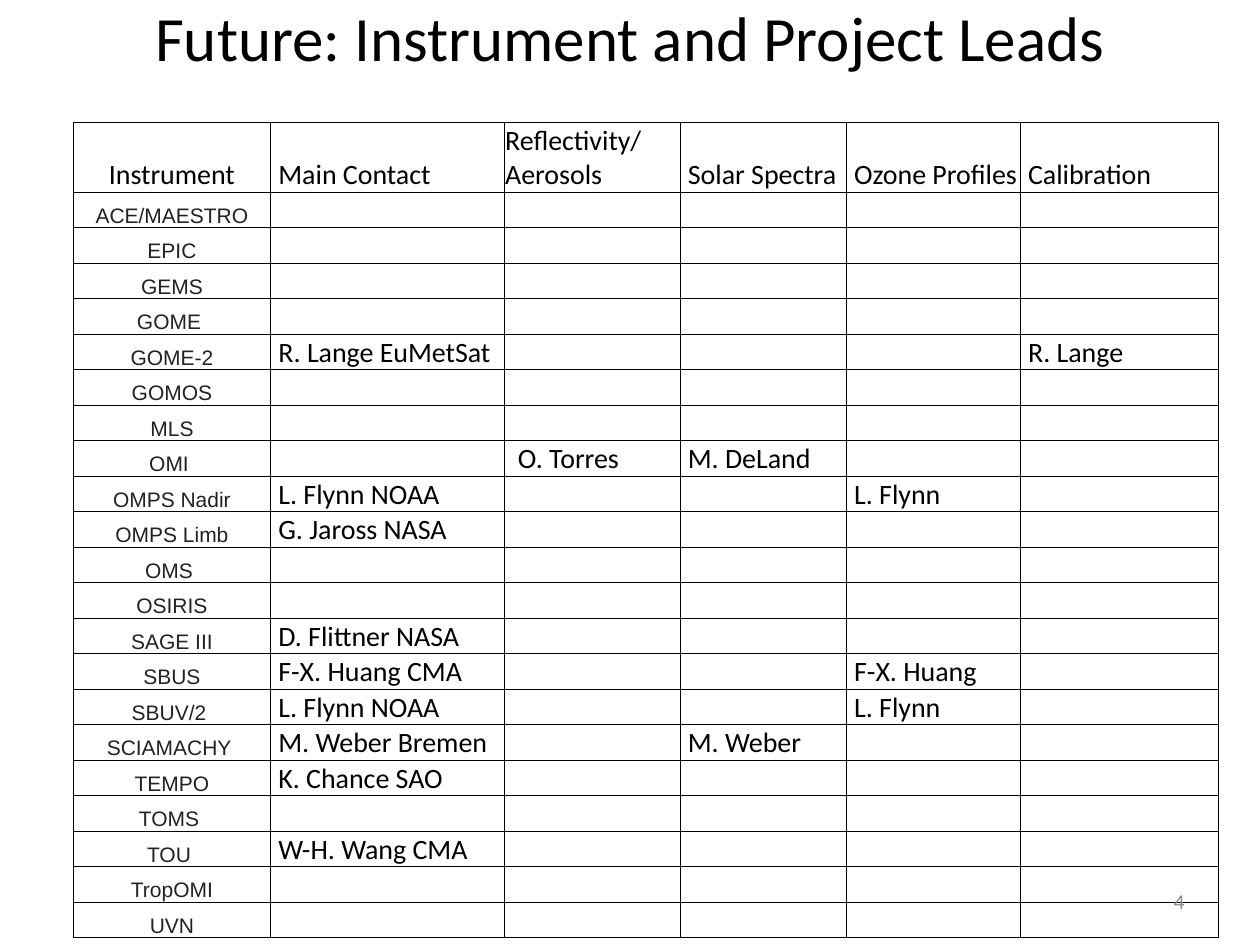
from lxml.etree import SubElement
from pptx import Presentation
from pptx.dml.color import RGBColor
from pptx.enum.text import MSO_ANCHOR as ANCHOR, PP_ALIGN as ALIGN
from pptx.oxml.ns import qn
from pptx.util import Inches, Pt

COLUMNS = ["Instrument", "Main Contact", "Reflectivity/ Aerosols",
           "Solar Spectra", "Ozone Profiles", "Calibration"]
WIDTHS = [1.57, 1.85, 1.4, 1.32, 1.38, 1.57]
INSTRUMENTS = ["ACE/MAESTRO", "EPIC", "GEMS", "GOME ", "GOME-2", "GOMOS", "MLS",
               "OMI ", "OMPS Nadir", "OMPS Limb", "OMS ", "OSIRIS", "SAGE III",
               "SBUS", "SBUV/2 ", "SCIAMACHY ", "TEMPO", "TOMS ", "TOU ",
               "TropOMI", "UVN"]
# Leads by instrument, then by column number
LEADS = {
    "GOME-2": {1: "R. Lange EuMetSat", 5: "R. Lange"},
    "OMI": {2: "O. Torres", 3: "M. DeLand"},
    "OMPS Nadir": {1: "L. Flynn NOAA", 4: "L. Flynn"},
    "OMPS Limb": {1: "G. Jaross NASA"},
    "SAGE III": {1: "D. Flittner NASA"},
    "SBUS": {1: "F-X. Huang CMA", 4: "F-X. Huang"},
    "SBUV/2": {1: "L. Flynn NOAA", 4: "L. Flynn"},
    "SCIAMACHY": {1: "M. Weber Bremen", 3: "M. Weber"},
    "TEMPO": {1: "K. Chance SAO"},
    "TOU": {1: "W-H. Wang CMA"},
}


def write(tf, text, size, color="000000", font="Calibri", align=ALIGN.LEFT):
    p = tf.paragraphs[0]
    p.alignment = align
    if not text:  # an empty cell keeps its text size through the end mark
        SubElement(p._p, qn("a:endParaRPr"), sz=str(size * 100))
        return
    p.text = text
    f = p.runs[0].font
    f.name, f.size = font, Pt(size)
    f.color.rgb = RGBColor.from_string(color)


def set_borders(cell):
    tcPr = cell._tc.get_or_add_tcPr()
    for side in ("lnL", "lnR", "lnT", "lnB"):
        ln = SubElement(tcPr, qn(f"a:{side}"), w=str(Pt(0.5)))
        fill = SubElement(ln, qn("a:solidFill"))
        SubElement(fill, qn("a:srgbClr"), val="000000")


prs = Presentation()
prs.slide_width, prs.slide_height = Inches(10), Inches(7.5)
s = prs.slides.add_slide(prs.slide_layouts[6])

# Table of leads
rows = [COLUMNS]
for name in INSTRUMENTS:
    leads = LEADS.get(name.strip(), {})
    rows.append([name] + [leads.get(c, "") for c in range(1, len(COLUMNS))])

frame = s.shapes.add_table(len(rows), len(COLUMNS), Inches(0.58), Inches(0.97),
                           Inches(9.08), Inches(6.36))
table = frame.table
table.first_row = table.horz_banding = False
for column, width in zip(table.columns, WIDTHS):
    column.width = Inches(width)

for r, values in enumerate(rows):
    table.rows[r].height = Inches(0.26 if r else 0.52)
    for c, value in enumerate(values):
        cell = table.cell(r, c)
        cell.margin_left = cell.margin_right = cell.margin_top = Inches(0.01)
        cell.margin_bottom = 0
        cell.vertical_anchor = ANCHOR.BOTTOM
        set_borders(cell)
        cell.fill.background()
        if c == 0 and r:
            write(cell.text_frame, value, 12, "222222", "Arial", ALIGN.CENTER)
        elif c == 0:
            write(cell.text_frame, value, 16, align=ALIGN.CENTER)
        else:
            if c == 2 and r:
                cell.margin_left = Inches(0.06)
            lead_in = "" if not value or (c == 2 and r == 0) else " "
            write(cell.text_frame, lead_in + value, 16)
frame.height = Inches(6.36)

# Slide number and title
for box, text, size, color, align in [
    ((7.17, 6.95, 2.33, 0.4), "4", 12, "8C8C8C", ALIGN.RIGHT),
    ((0.5, 0, 9, 0.58), "Future: Instrument and Project Leads", 36, "000000",
     ALIGN.CENTER),
]:
    tf = s.shapes.add_textbox(*map(Inches, box)).text_frame
    tf.word_wrap = True
    tf.vertical_anchor = ANCHOR.MIDDLE
    write(tf, text, size, color, align=align)

prs.save("out.pptx")
